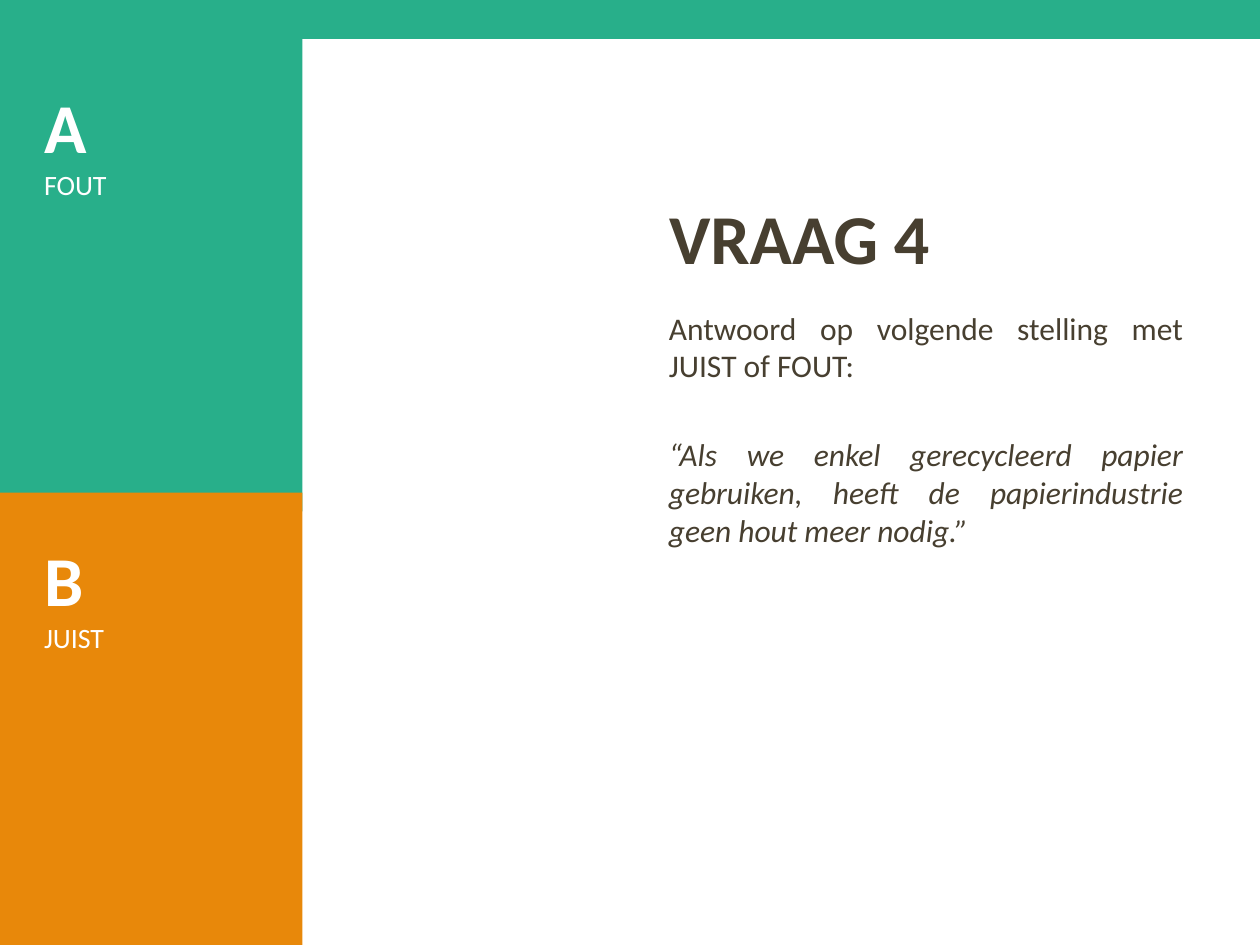
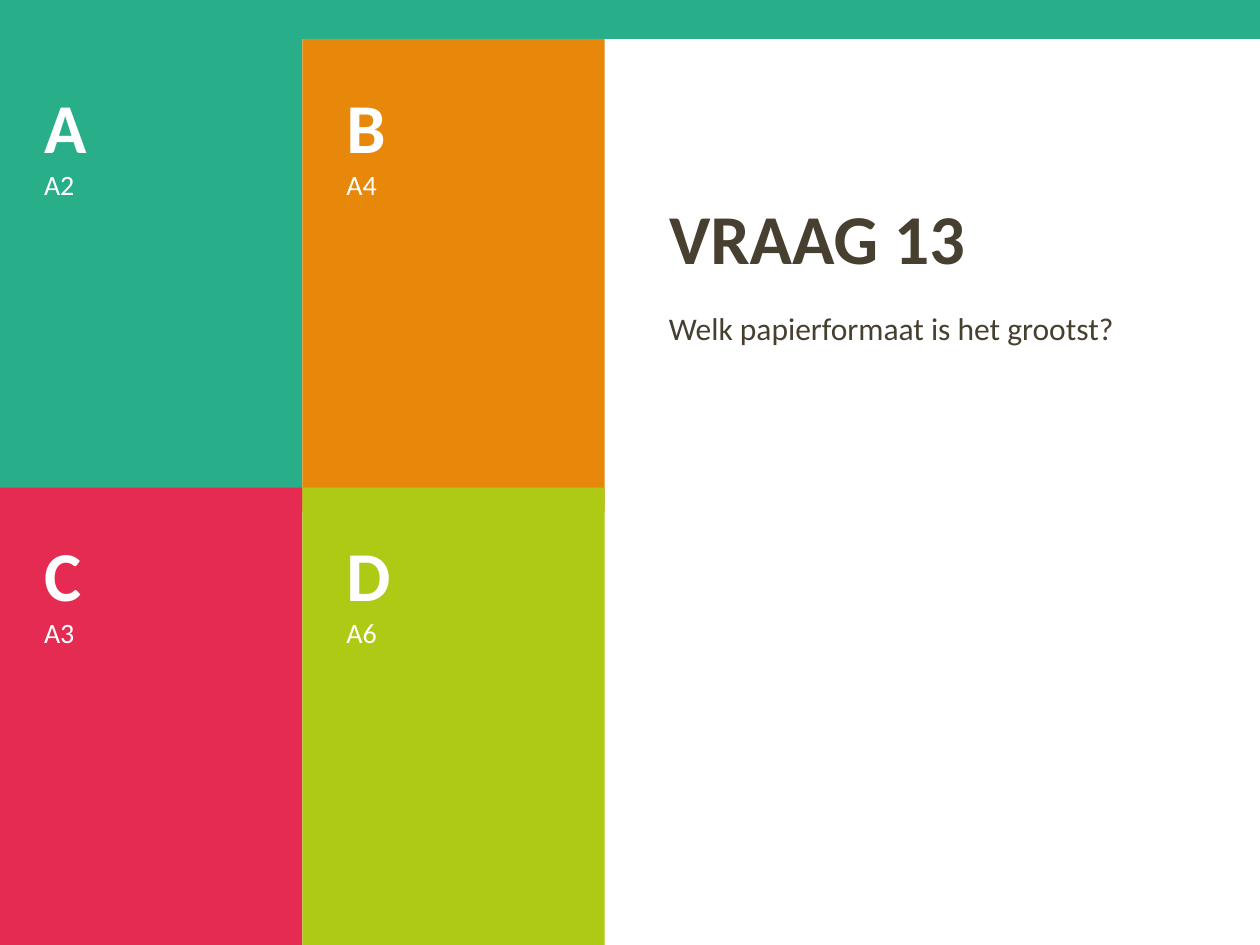
import pptx
import pptx.dml.color
import pptx.enum.shapes
import pptx.enum.text
import pptx.util

Inches = pptx.util.Inches
RGBColor = pptx.dml.color.RGBColor
ALIGN = pptx.enum.text.PP_ALIGN
ANCHOR = pptx.enum.text.MSO_ANCHOR

GREEN = RGBColor(0x28, 0xAF, 0x8A)
ORANGE = RGBColor(0xE8, 0x88, 0x0A)
RED = RGBColor(0xE5, 0x2B, 0x51)
LIME = RGBColor(0xAF, 0xCA, 0x15)
BROWN = RGBColor(0x47, 0x3F, 0x30)
WHITE = RGBColor(0xFF, 0xFF, 0xFF)
TILE_COLORS = (GREEN, ORANGE, RED, LIME)

FONT = "Calibri"
TITLE_ONLY_LAYOUT = 5
SLIDE_WIDTH, SLIDE_HEIGHT = 10, 7.5
BAND_HEIGHT = 0.31
TILE_WIDTH, TILE_HEIGHT = 2.4, 3.75
TILE_INSET = 0.35
QUESTION_LEFT, QUESTION_WIDTH = 5.21, 4.28
BODY_SIZE = 18
BODY_GAP = 0.2 * BODY_SIZE
QUOTE_GAP = 1.22 * BODY_SIZE + 2 * BODY_GAP


class QuizDeck:
    def __init__(self):
        self.presentation = pptx.Presentation()
        self.presentation.slide_width = Inches(SLIDE_WIDTH)
        self.presentation.slide_height = Inches(SLIDE_HEIGHT)
        self.slide = None

    def add_slide(self):
        layout = self.presentation.slide_layouts[TITLE_ONLY_LAYOUT]
        self.slide = self.presentation.slides.add_slide(layout)

    def style(self, paragraph, size, color, bold=False, italic=False, align=ALIGN.LEFT):
        paragraph.alignment = align
        font = paragraph.font
        font.name, font.size, font.color.rgb = FONT, pptx.util.Pt(size), color
        font.bold, font.italic = bold, italic

    def add_title(self, text):
        title = self.slide.shapes.title
        title.left, title.top = Inches(QUESTION_LEFT), Inches(1.31)
        title.width, title.height = Inches(QUESTION_WIDTH), Inches(0.95)
        title.text_frame.vertical_anchor = ANCHOR.BOTTOM
        title.text_frame.text = text
        self.style(title.text_frame.paragraphs[0], 40, BROWN, bold=True)

    def add_body(self, question, quote=None):
        """Write the question, followed by an italic statement if there is one."""
        box = self.slide.shapes.add_textbox(
            Inches(QUESTION_LEFT), Inches(2.4), Inches(QUESTION_WIDTH), Inches(2.49))
        frame = box.text_frame
        frame.word_wrap = True
        frame.text = question
        align = ALIGN.JUSTIFY if quote else ALIGN.LEFT
        first = frame.paragraphs[0]
        first.space_before = pptx.util.Pt(BODY_GAP)
        self.style(first, BODY_SIZE, BROWN, align=align)
        if quote:
            statement = frame.add_paragraph()
            statement.text = quote
            statement.space_before = pptx.util.Pt(QUOTE_GAP)
            self.style(statement, BODY_SIZE, BROWN, italic=True, align=align)

    def add_rectangle(self, left, top, width, height, color):
        shape = self.slide.shapes.add_shape(
            pptx.enum.shapes.MSO_SHAPE.RECTANGLE,
            Inches(left), Inches(top), Inches(width), Inches(height))
        shape.shadow.inherit = False
        shape.fill.solid()
        shape.fill.fore_color.rgb = color
        shape.line.fill.background()
        return shape

    def add_tile(self, left, top, letter, answer, color):
        height = min(TILE_HEIGHT, SLIDE_HEIGHT - top)
        frame = self.add_rectangle(left, top, TILE_WIDTH, height, color).text_frame
        frame.margin_left = frame.margin_right = Inches(TILE_INSET)
        frame.margin_top = frame.margin_bottom = Inches(TILE_INSET)
        frame.vertical_anchor = ANCHOR.TOP
        frame.word_wrap = True
        frame.text = f"{letter}\n{answer}"
        self.style(frame.paragraphs[0], 40, WHITE, bold=True)
        self.style(frame.paragraphs[1], 16, WHITE)

    def add_answers(self, answers, columns, second_row_top):
        row_tops = (BAND_HEIGHT, second_row_top)
        for index, (letter, answer, color) in enumerate(zip("ABCD", answers, TILE_COLORS)):
            row, column = divmod(index, columns)
            self.add_tile(column * TILE_WIDTH, row_tops[row], letter, answer, color)

    def add_band(self):
        self.add_rectangle(0, 0, SLIDE_WIDTH, BAND_HEIGHT, GREEN)

    def add_question(self, title, question, answers, columns, second_row_top, quote=None):
        self.add_slide()
        self.add_title(title)
        self.add_body(question, quote)
        self.add_answers(answers, columns, second_row_top)
        self.add_band()


def main():
    deck = QuizDeck()
    deck.add_question(
        "VRAAG 4", "Antwoord op volgende stelling met JUIST of FOUT:",
        ("FOUT", "JUIST"), columns=1, second_row_top=3.91,
        quote="“Als we enkel gerecycleerd papier gebruiken, "
              "heeft de papierindustrie geen hout meer nodig.”")
    deck.add_question(
        "VRAAG 13", "Welk papierformaat is het grootst?",
        ("A2", "A4", "A3", "A6"), columns=2, second_row_top=3.87)
    deck.presentation.save("out.pptx")


if __name__ == "__main__":
    main()
